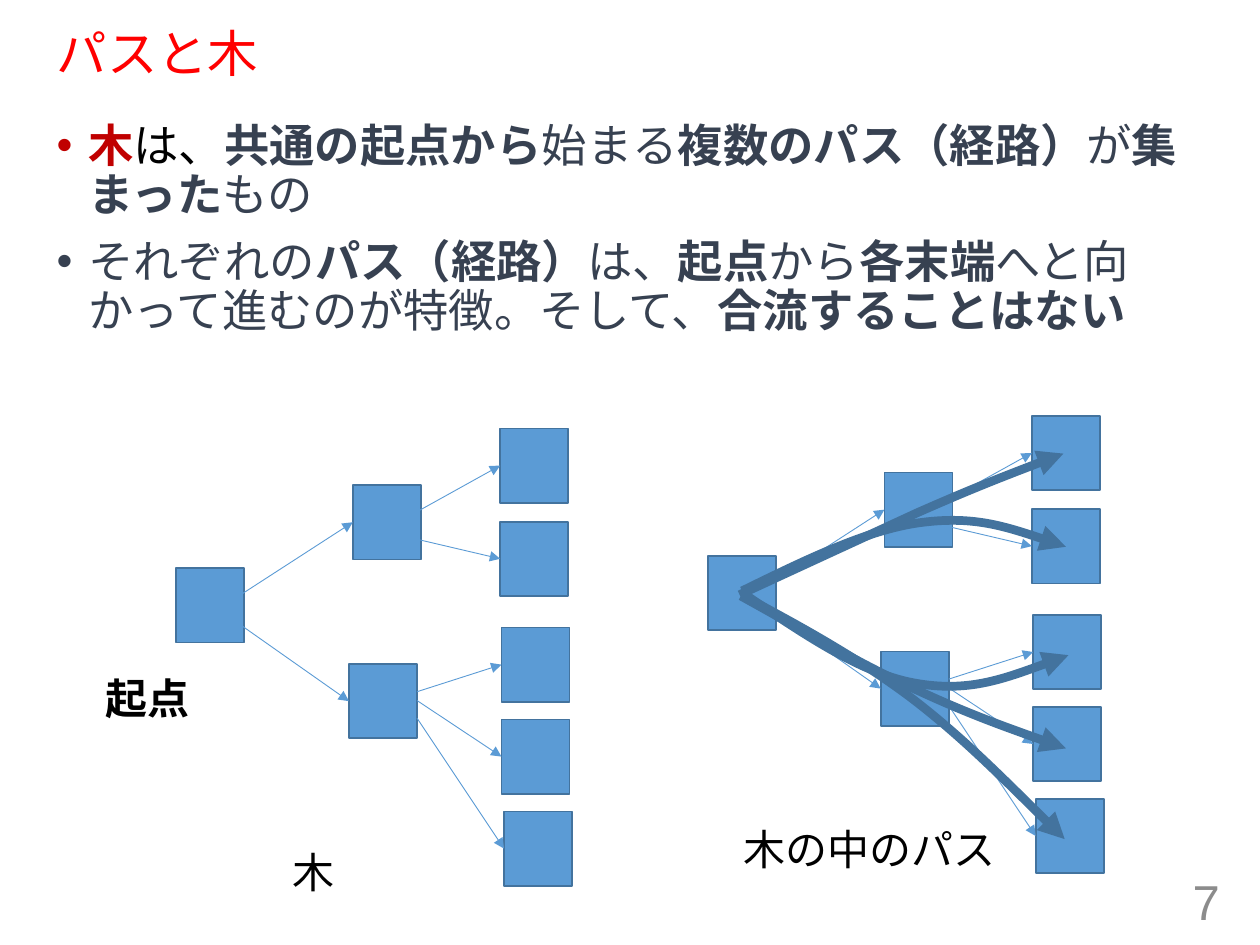
from lxml.etree import SubElement
from pptx import Presentation
from pptx.dml.color import RGBColor
from pptx.enum.lang import MSO_LANGUAGE_ID as Language
from pptx.enum.shapes import MSO_CONNECTOR as Connector, MSO_SHAPE as Shape
from pptx.enum.text import MSO_ANCHOR as Anchor, MSO_AUTO_SIZE as AutoSize, PP_ALIGN as Align
from pptx.oxml.ns import qn
from pptx.util import Inches, Pt

COLORS = {
    "title": "FF0000", "key": "C00000", "text": "000000", "body": "374151",
    "number": "8C8C8C", "node": "5B9BD5", "outline": "43739E",
}
NODE_WIDTH, NODE_HEIGHT = 0.54, 0.59

# Node corners, relative to the corner of the tree
NODES = {
    "root": (0, 1.11), "upper": (1.4, 0.45), "leaf1": (2.57, 0), "leaf2": (2.57, 0.74),
    "lower": (1.37, 1.87), "leaf5": (2.6, 3.04), "leaf3": (2.58, 1.58), "leaf4": (2.58, 2.31),
}
# Start of each edge and the node whose left side it reaches
EDGES = [
    ((0.48, 1.34), "upper"), ((0.51, 1.56), "lower"),
    ((1.93, 0.65), "leaf1"), ((1.91, 0.88), "leaf2"),
    ((1.91, 2.09), "leaf3"), ((1.91, 2.16), "leaf4"), ((1.91, 2.3), "leaf5"),
]
# Start of each path, then its segments: one point for a line, three for a curve
PATHS = [
    ((0.25, 1.42), [[(1.66, 0.77)], [(2.09, 0.58), (2.45, 0.44), (2.82, 0.3)]]),
    ((0.27, 1.39), [[(0.76, 1.15), (1.25, 0.91), (1.67, 0.85)],
                    [(2.1, 0.79), (2.47, 0.91), (2.84, 1.04)]]),
    ((0.28, 1.41), [[(0.74, 1.72), (1.2, 2.04), (1.63, 2.12)],
                    [(2.06, 2.2), (2.46, 2.05), (2.86, 1.9)]]),
    ((0.26, 1.43), [[(0.73, 1.69), (1.19, 1.96), (1.62, 2.16)],
                    [(2.05, 2.36), (2.44, 2.5), (2.84, 2.64)]]),
    ((0.28, 1.43), [[(0.73, 1.67), (1.17, 1.91), (1.6, 2.23)],
                    [(2.02, 2.55), (2.42, 2.96), (2.83, 3.36)]]),
]
BULLETS = [
    [("木", {"bold": True, "color": "key", "font": "Arial"}),
     ("は、", {"color": "text", "font": "Arial"}),
     ("共通の起点から", {"bold": True}), ("始まる", {}),
     ("複数のパス（経路）", {"bold": True}), ("が", {}),
     ("集まった", {"bold": True}), ("もの", {})],
    [("それぞれの", {}), ("パス（経路）", {"bold": True}), ("は、", {}),
     ("起点", {"bold": True}), ("から", {}), ("各末端", {"bold": True}),
     ("へと向かって進むのが特徴。そして、", {}), ("合流することはない", {"bold": True})],
]


def rgb(name):
    return RGBColor.from_string(COLORS[name])


def add_run(paragraph, text, size=24, font="Calibri", color="text", bold=False):
    run = paragraph.add_run()
    run.text = text
    run.font.size = Pt(size)
    run.font.name = font
    run.font.bold = bold
    run.font.color.rgb = rgb(color)
    run.font.language_id = Language.JAPANESE


def place(shape, left, top, width, height):
    shape.left, shape.top = Inches(left), Inches(top)
    shape.width, shape.height = Inches(width), Inches(height)


def add_label(slide, text, left, top, width, height, align=Align.LEFT, wrap=False, **style):
    label = slide.shapes.add_textbox(Inches(left), Inches(top), Inches(width), Inches(height))
    frame = label.text_frame
    frame.word_wrap = wrap
    frame.auto_size = AutoSize.NONE if wrap else AutoSize.SHAPE_TO_FIT_TEXT
    frame.vertical_anchor = Anchor.MIDDLE if wrap else Anchor.TOP
    frame.paragraphs[0].alignment = align
    add_run(frame.paragraphs[0], text, **style)


def style_arrow(shape, color, width):
    shape.line.color.rgb = rgb(color)
    shape.line.width = Pt(width)
    SubElement(shape.line._get_or_add_ln(), qn("a:tailEnd"), type="triangle")


def fill_title(title, left, top, width, height):
    place(title, left, top, width, height)
    frame = title.text_frame
    frame.auto_size = AutoSize.NONE
    frame.vertical_anchor = Anchor.MIDDLE
    paragraph = frame.paragraphs[0]
    paragraph.alignment = Align.LEFT
    paragraph.line_spacing = 0.9
    add_run(paragraph, "パスと木", size=28.8, font="Arial", color="title")


def fill_body(body, left, top, width, height):
    place(body, left, top, width, height)
    frame = body.text_frame
    frame.auto_size = AutoSize.NONE
    for index, runs in enumerate(BULLETS):
        paragraph = frame.add_paragraph() if index else frame.paragraphs[0]
        paragraph.line_spacing = 0.9
        paragraph.space_before = Pt(10 if index else 0)
        properties = paragraph._p.get_or_add_pPr()
        properties.set("marL", str(Inches(0.25)))
        properties.set("indent", str(Inches(-0.25)))
        SubElement(properties, qn("a:buFont"), typeface="Arial")
        SubElement(properties, qn("a:buChar"), char="•")
        for text, style in runs:
            add_run(paragraph, text, **{"size": 25.9, "font": "Lato", "color": "body", **style})


def add_tree(slide, left, top):
    for x, y in NODES.values():
        node = slide.shapes.add_shape(Shape.RECTANGLE, Inches(left + x), Inches(top + y),
                                      Inches(NODE_WIDTH), Inches(NODE_HEIGHT))
        node.shadow.inherit = False
        node.fill.solid()
        node.fill.fore_color.rgb = rgb("node")
        node.line.color.rgb = rgb("outline")
        node.line.width = Pt(1)
    for (x, y), child in EDGES:
        child_x, child_y = NODES[child]
        edge = slide.shapes.add_connector(
            Connector.STRAIGHT, Inches(left + x), Inches(top + y),
            Inches(left + child_x), Inches(top + child_y + NODE_HEIGHT / 2))
        style_arrow(edge, "node", 0.5)
        SubElement(edge._element.spPr, qn("a:effectLst"))


def bend(shape, segments):
    """Turn the straight segments of a freeform that have control points into cubic curves."""
    for line, points in zip(list(shape._element.iter(qn("a:lnTo"))), segments):
        if len(points) == 1:
            continue
        line.tag = qn("a:cubicBezTo")
        for child in list(line):
            line.remove(child)
        for x, y in points:
            SubElement(line, qn("a:pt"), x=str(x - shape.left), y=str(y - shape.top))


def add_paths(slide, left, top):
    def locate(point):
        return Inches(left + point[0]), Inches(top + point[1])

    for start, segments in PATHS:
        located = [[locate(point) for point in segment] for segment in segments]
        builder = slide.shapes.build_freeform(*locate(start))
        builder.add_line_segments([segment[-1] for segment in located], close=False)
        arrow = builder.convert_to_shape()
        bend(arrow, located)
        arrow.shadow.inherit = False
        arrow.fill.background()
        style_arrow(arrow, "outline", 5)


def main():
    presentation = Presentation()
    presentation.slide_width, presentation.slide_height = Inches(10), Inches(7.5)
    slide = presentation.slides.add_slide(presentation.slide_layouts[1])
    fill_title(slide.shapes.title, 0.35, 0.19, 9.25, 0.51)
    fill_body(slide.placeholders[1], 0.35, 0.93, 9.25, 1.95)
    add_label(slide, "7", 7.53, 6.95, 2.25, 0.4, align=Align.RIGHT, wrap=True,
              size=28, font="Arial", color="number")

    add_tree(slide, 1.4, 3.4)
    add_label(slide, "木", 2.22, 6.67, 0.54, 0.5)

    add_tree(slide, 5.62, 3.3)
    add_label(slide, "木の中のパス", 5.8, 6.49, 2.22, 0.5)
    add_label(slide, "起点", 0.74, 5.29, 0.88, 0.5, bold=True)
    add_paths(slide, 5.62, 3.3)
    presentation.save("out.pptx")


if __name__ == "__main__":
    main()
